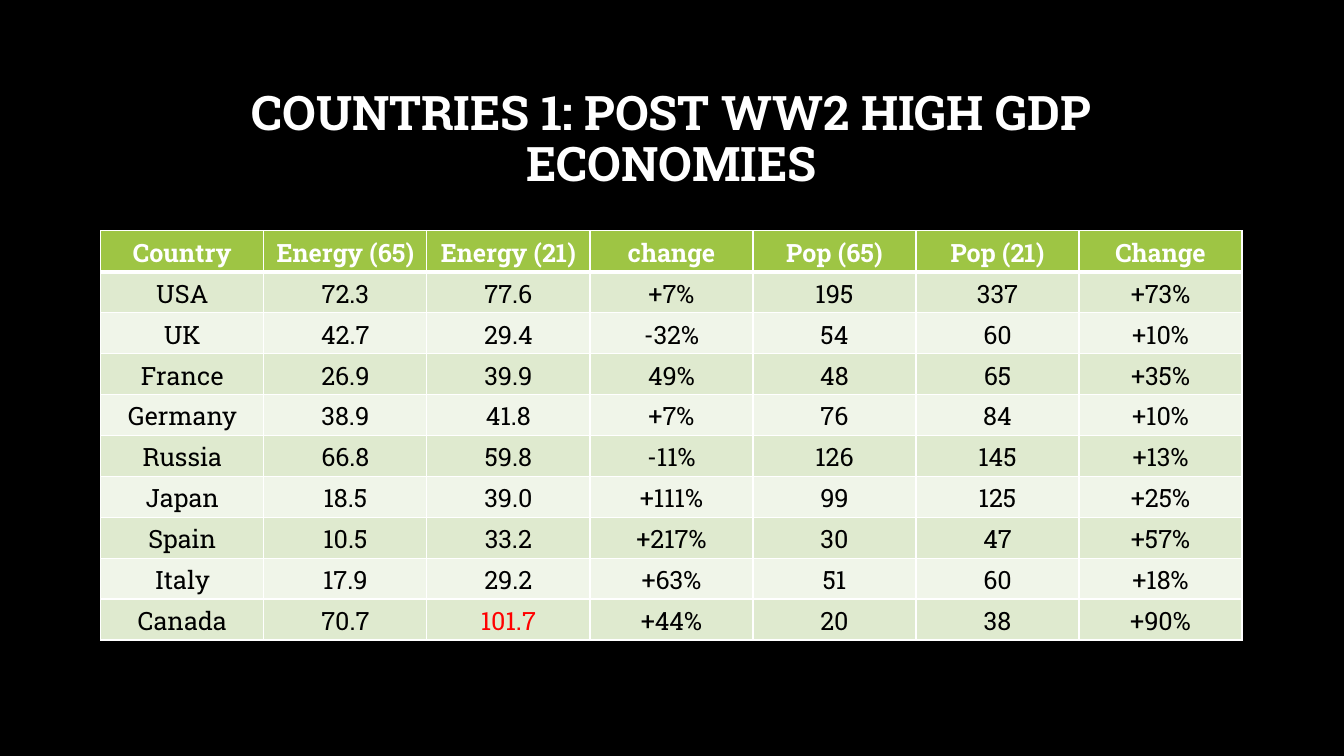
from lxml import etree
from pptx import Presentation
from pptx.dml.color import RGBColor
from pptx.enum.text import MSO_ANCHOR, PP_ALIGN
from pptx.oxml.ns import qn
from pptx.util import Inches, Pt

FONT = "Roboto Slab"
BLACK = RGBColor(0x00, 0x00, 0x00)
WHITE = RGBColor(0xFF, 0xFF, 0xFF)
RED = RGBColor(0xFF, 0x00, 0x00)
GREEN = RGBColor(0x9E, 0xC5, 0x44)
BAND_DARK = RGBColor(0xDF, 0xEA, 0xCF)
BAND_LIGHT = RGBColor(0xF0, 0xF5, 0xE9)
CENTER = PP_ALIGN.CENTER
MIDDLE = MSO_ANCHOR.MIDDLE

ROWS = [
    ["Country", "Energy (65)", "Energy (21)", "change", "Pop (65)", "Pop (21)", "Change"],
    ["USA", "72.3", "77.6", "+7%", "195", "337", "+73%"],
    ["UK", "42.7", "29.4", "-32%", "54", "60", "+10%"],
    ["France", "26.9", "39.9", "49%", "48", "65", "+35%"],
    ["Germany", "38.9", "41.8", "+7%", "76", "84", "+10%"],
    ["Russia", "66.8", "59.8", "-11%", "126", "145", "+13%"],
    ["Japan", "18.5", "39.0", "+111%", "99", "125", "+25%"],
    ["Spain", "10.5", "33.2", "+217%", "30", "47", "+57%"],
    ["Italy", "17.9", "29.2", "+63%", "51", "60", "+18%"],
    ["Canada", "70.7", "101.7", "+44%", "20", "38", "+90%"],
]
HIGHLIGHT = "101.7"


def write(tf, text, size=18, color=BLACK, bold=False, spacing=None):
    p = tf.paragraphs[0]
    p.alignment = CENTER
    p.line_spacing = spacing
    r = p.add_run()
    r.text = text
    r.font.name = FONT
    r.font.size = Pt(size)
    r.font.bold = bold
    r.font.color.rgb = color


def add_border(cell, side, width):
    ln = etree.SubElement(cell._tc.get_or_add_tcPr(), qn(f"a:ln{side}"), w=str(Pt(width)))
    fill = etree.SubElement(ln, qn("a:solidFill"))
    etree.SubElement(fill, qn("a:srgbClr"), val=str(WHITE))


prs = Presentation()
prs.slide_width = Inches(13.33)
prs.slide_height = Inches(7.5)
s = prs.slides.add_slide(prs.slide_layouts[6])
s.background.fill.solid()
s.background.fill.fore_color.rgb = BLACK

# Title
tf = s.shapes.add_textbox(Inches(1), Inches(0.67), Inches(11.32), Inches(1.45)).text_frame
tf.word_wrap = True
tf.vertical_anchor = MIDDLE
write(tf, "COUNTRIES 1: POST WW2 HIGH GDP ECONOMIES", size=34, color=WHITE, bold=True, spacing=0.9)

# Energy and population table
table = s.shapes.add_table(len(ROWS), len(ROWS[0]), Inches(1), Inches(2.29),
                           Inches(11.32), Inches(4.06)).table
for i, row in enumerate(ROWS):
    header = i == 0
    band = GREEN if header else BAND_DARK if i % 2 else BAND_LIGHT
    # The rule below the header is heavier than the other borders
    widths = {"L": 1, "R": 1, "T": 3 if i == 1 else 1, "B": 3 if header else 1}
    for j, value in enumerate(row):
        cell = table.cell(i, j)
        for side, width in widths.items():
            add_border(cell, side, width)
        cell.fill.solid()
        cell.fill.fore_color.rgb = band
        color = WHITE if header else RED if value == HIGHLIGHT else BLACK
        write(cell.text_frame, value, color=color, bold=header)

prs.save("out.pptx")
